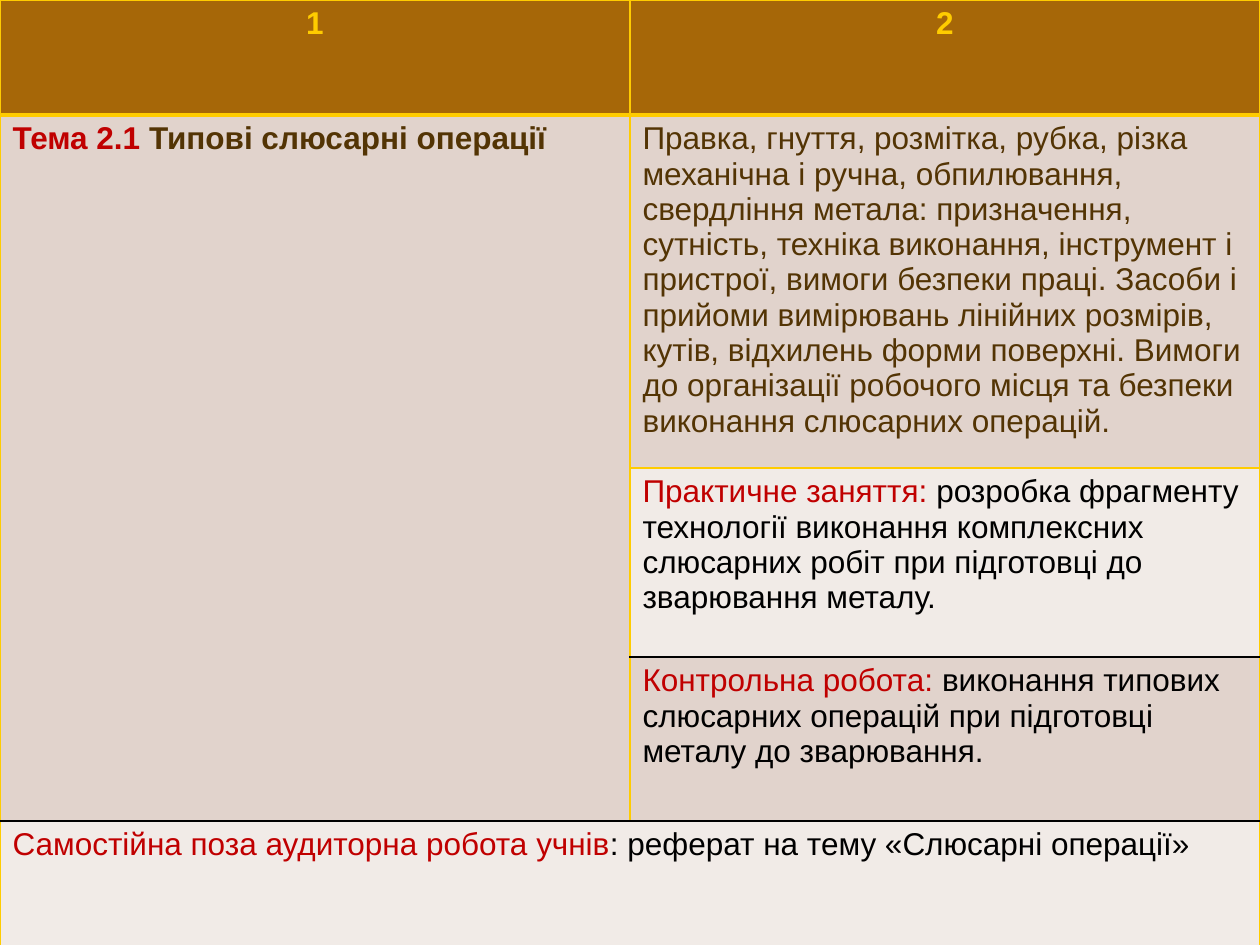
import pptx
import pptx.util
import pptx.dml.color
import pptx.enum.text
import pptx.oxml.ns
from lxml import etree

RGBColor = pptx.dml.color.RGBColor
YELLOW = RGBColor(0xFF, 0xCC, 0x00)
OCHRE = RGBColor(0xA6, 0x67, 0x08)
BROWN = RGBColor(0x53, 0x34, 0x04)
RED = RGBColor(0xC0, 0x00, 0x00)
BLACK = RGBColor(0x00, 0x00, 0x00)
DARK_BAND = RGBColor(0xE1, 0xD3, 0xCC)
LIGHT_BAND = RGBColor(0xF1, 0xEB, 0xE7)

PIXEL = pptx.util.Inches(1) // 126
SLIDE_WIDTH, SLIDE_HEIGHT = 1260, 945
COLUMN_WIDTHS = [630, 630]
ROW_HEIGHTS = [115, 353, 189, 164, 165]
FONT_NAME = "Arial"
FONT_SIZE = 18

THIN_YELLOW = (YELLOW, 1)
THICK_YELLOW = (YELLOW, 3)
THIN_BLACK = (BLACK, 1)

CELLS = [
    dict(at=(0, 0), fill=OCHRE, runs=[("1", YELLOW)], bold=True, centered=True,
         top=THIN_YELLOW, bottom=THICK_YELLOW),
    dict(at=(0, 1), fill=OCHRE, runs=[("2", YELLOW)], bold=True, centered=True,
         top=THIN_YELLOW, bottom=THICK_YELLOW),
    dict(at=(1, 0), end=(3, 0), fill=DARK_BAND, bold=True,
         runs=[("Тема 2.1 ", RED), ("Типові слюсарні операції", BROWN)],
         top=THICK_YELLOW, bottom=THIN_BLACK),
    dict(at=(1, 1), fill=DARK_BAND,
         runs=[("Правка, гнуття, розмітка, рубка, різка механічна і ручна, обпилювання, "
                "свердління метала: призначення, сутність, техніка виконання, інструмент і "
                "пристрої, вимоги безпеки праці. Засоби і прийоми вимірювань лінійних "
                "розмірів, кутів, відхилень форми поверхні. Вимоги до організації робочого "
                "місця та безпеки виконання слюсарних операцій.", BROWN)],
         top=THICK_YELLOW, bottom=THIN_YELLOW),
    dict(at=(2, 1), fill=LIGHT_BAND,
         runs=[("Практичне заняття: ", RED),
               ("розробка фрагменту технології виконання комплексних слюсарних робіт "
                "при підготовці до зварювання металу.", BLACK)],
         top=THIN_YELLOW, bottom=THIN_BLACK),
    dict(at=(3, 1), fill=DARK_BAND,
         runs=[("Контрольна робота: ", RED),
               ("виконання типових слюсарних операцій при підготовці металу до "
                "зварювання.", BLACK)],
         top=THIN_BLACK, bottom=THIN_BLACK),
    dict(at=(4, 0), end=(4, 1), fill=LIGHT_BAND,
         runs=[("Самостійна поза аудиторна робота учнів", RED),
               (": реферат на тему «Слюсарні операції»", BLACK)],
         top=THIN_BLACK, bottom=THIN_YELLOW),
]


def write_text(paragraph, text, color, bold=False):
    run = paragraph.add_run()
    run.text = text
    run.font.name = FONT_NAME
    run.font.size = pptx.util.Pt(FONT_SIZE)
    run.font.bold = bold
    run.font.color.rgb = color


def set_borders(cell, top, bottom):
    properties = cell._tc.get_or_add_tcPr()
    sides = [("lnL", THIN_YELLOW), ("lnR", THIN_YELLOW), ("lnT", top), ("lnB", bottom)]
    for position, (tag, (color, width)) in enumerate(sides):
        line = etree.Element(pptx.oxml.ns.qn("a:" + tag), w=str(pptx.util.Pt(width)))
        fill = etree.SubElement(line, pptx.oxml.ns.qn("a:solidFill"))
        etree.SubElement(fill, pptx.oxml.ns.qn("a:srgbClr"), val=str(color))
        properties.insert(position, line)


def fill_cell(table, at, fill, runs, top, bottom, end=None, bold=False, centered=False):
    cell = table.cell(*at)
    if end:
        cell.merge(table.cell(*end))
    cell.fill.solid()
    cell.fill.fore_color.rgb = fill
    set_borders(cell, top, bottom)
    paragraph = cell.text_frame.paragraphs[0]
    if centered:
        paragraph.alignment = pptx.enum.text.PP_ALIGN.CENTER
    for text, color in runs:
        write_text(paragraph, text, color, bold=bold)


def main():
    presentation = pptx.Presentation()
    presentation.slide_width = SLIDE_WIDTH * PIXEL
    presentation.slide_height = SLIDE_HEIGHT * PIXEL
    slide = presentation.slides.add_slide(presentation.slide_layouts[6])
    slide.background.fill.solid()
    slide.background.fill.fore_color.rgb = YELLOW

    table = slide.shapes.add_table(
        len(ROW_HEIGHTS), len(COLUMN_WIDTHS), 0, 0,
        sum(COLUMN_WIDTHS) * PIXEL, sum(ROW_HEIGHTS) * PIXEL).table
    for column, width in zip(table.columns, COLUMN_WIDTHS):
        column.width = width * PIXEL
    for row, height in zip(table.rows, ROW_HEIGHTS):
        row.height = height * PIXEL
    for cell in CELLS:
        fill_cell(table, **cell)

    presentation.save("out.pptx")


if __name__ == "__main__":
    main()
